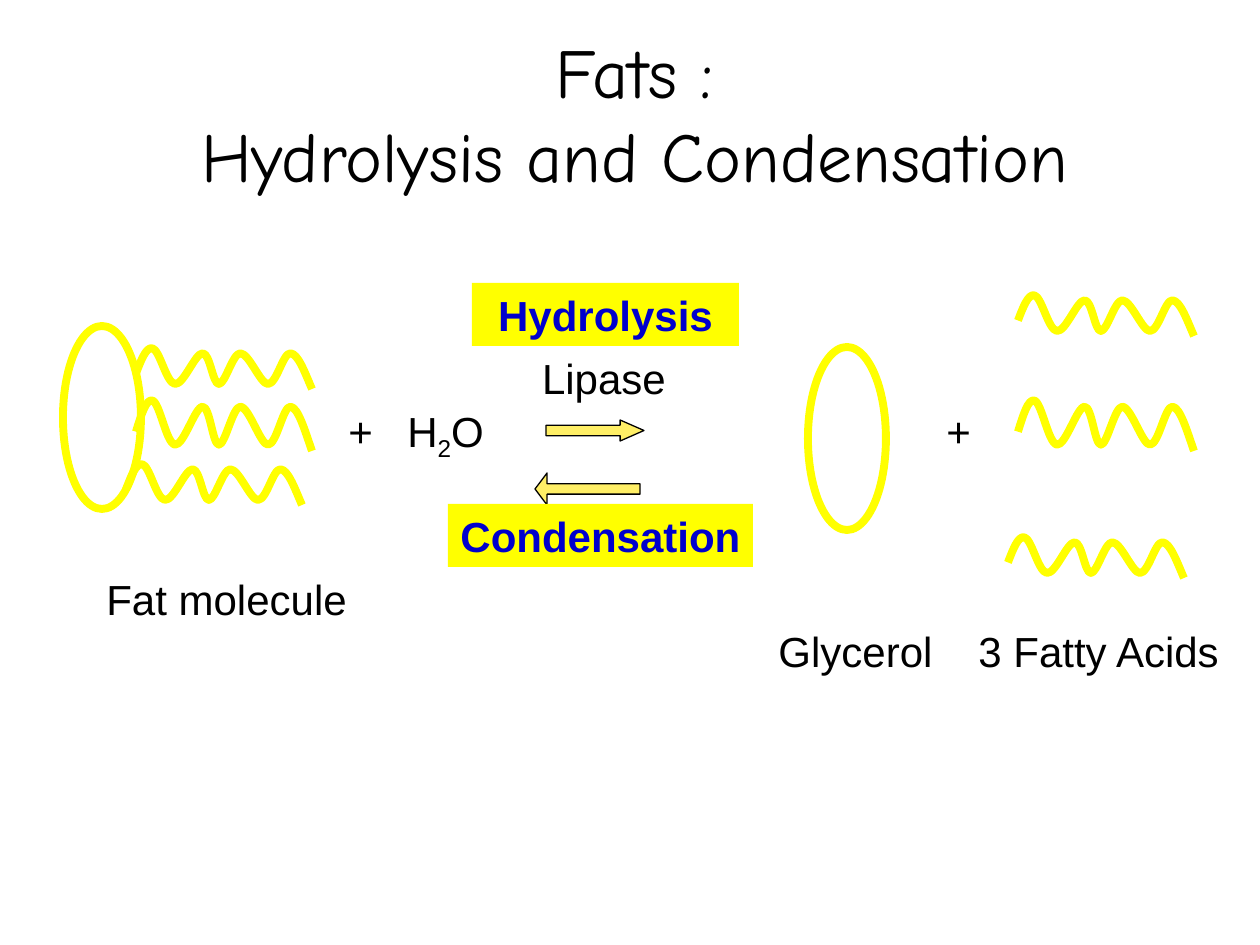
from lxml import etree
from pptx import Presentation
from pptx.dml.color import RGBColor
from pptx.enum.shapes import MSO_SHAPE
from pptx.enum.text import MSO_ANCHOR, MSO_AUTO_SIZE, PP_ALIGN
from pptx.oxml.ns import qn
from pptx.util import Pt

EMU_PER_PX = 914400 / 126
LEFT, CENTER = PP_ALIGN.LEFT, PP_ALIGN.CENTER
TOP, BOTTOM = MSO_ANCHOR.TOP, MSO_ANCHOR.BOTTOM
FIT_TEXT = MSO_AUTO_SIZE.SHAPE_TO_FIT_TEXT
OVAL, RECTANGLE = MSO_SHAPE.OVAL, MSO_SHAPE.RECTANGLE
RIGHT_ARROW, LEFT_ARROW = MSO_SHAPE.RIGHT_ARROW, MSO_SHAPE.LEFT_ARROW
YELLOW, GOLD, BLUE, BLACK, WHITE = "FFFF00", "FFEF66", "0000CC", "000000", "FFFFFF"

WAVE_WIDTH = 176
# Bezier chain of a fatty acid tail: x in 1/140 of the width, y in % of the height
WAVE = [(0, 63), (4, 32), (8, 0), (13, 3), (19, 7), (24, 85), (31, 88),
        (38, 90), (47, 15), (53, 15), (59, 15), (61, 88), (66, 88),
        (71, 88), (77, 15), (83, 15), (90, 15), (99, 88), (105, 88),
        (112, 88), (117, 13), (123, 15), (129, 17), (134, 58), (140, 100)]


def px(length):
    return round(length * EMU_PER_PX)


def color(hex_string):
    return RGBColor.from_string(hex_string)


def write(shape, *parts, size=24, font="Arial", ink=BLACK, bold=False,
          align=LEFT, anchor=TOP, wrap=False, grow=True, subscripts=(), tab=None):
    """Fill a shape with one paragraph; subscripts lists indexes of lowered parts."""
    frame = shape.text_frame
    frame.word_wrap = wrap
    frame.vertical_anchor = anchor
    if grow:
        frame.auto_size = FIT_TEXT
    paragraph = frame.paragraphs[0]
    paragraph.alignment = align
    if tab:
        stops = etree.SubElement(paragraph._p.get_or_add_pPr(), qn("a:tabLst"))
        etree.SubElement(stops, qn("a:tab"), pos=str(px(tab)), algn="l")
    for index, part in enumerate(parts):
        for line_number, line in enumerate(part.split("\n")):
            if line_number:
                paragraph.add_line_break()
            run = paragraph.add_run()
            run.text = line
            run.font.size, run.font.name, run.font.bold = Pt(size), font, bold
            run.font.color.rgb = color(ink)
            if index in subscripts:
                run.font._element.set("baseline", "-25000")


def add_text(slide, box, *parts, **text_format):
    write(slide.shapes.add_textbox(*map(px, box)), *parts, **text_format)


def add_preset(slide, kind, box, fill, line=None, line_width=0.75, adjustments=()):
    shape = slide.shapes.add_shape(kind, *map(px, box))
    shape.shadow.inherit = False
    shape.fill.solid()
    shape.fill.fore_color.rgb = color(fill)
    if line:
        shape.line.color.rgb = color(line)
        shape.line.width = Pt(line_width)
    else:
        shape.line.fill.background()
    for index, value in enumerate(adjustments):
        shape.adjustments[index] = value
    return shape


def add_glycerol(slide, left, top):
    add_preset(slide, OVAL, (left, top, 78, 183), WHITE, YELLOW, 4.5)


def bend_lines(shape):
    """Turn every three line segments of a freeform into one Bezier curve."""
    lines = list(shape._element.iter(qn("a:lnTo")))
    for first in range(0, len(lines), 3):
        curve = etree.Element(qn("a:cubicBezTo"))
        lines[first].addprevious(curve)
        for line in lines[first:first + 3]:
            curve.append(line[0])
            line.getparent().remove(line)


def add_fatty_acid(slide, left, top, height):
    start, *controls = [(px(left + x * WAVE_WIDTH / 140), px(top + y * height / 100))
                        for x, y in WAVE]
    builder = slide.shapes.build_freeform(*start, scale=1.0)
    builder.add_line_segments(controls, close=False)
    tail = builder.convert_to_shape()
    bend_lines(tail)
    tail.shadow.inherit = False
    tail.fill.background()
    tail.line.color.rgb = color(YELLOW)
    tail.line.width = Pt(4.5)


def add_fat_molecule(slide, left, top):
    add_glycerol(slide, left, top)
    for x, y, height in ((73, 21, 42), (73, 73, 52), (63, 137, 42)):
        add_fatty_acid(slide, left + x, top + y, height)
    add_text(slide, (left + 31, top + 241, 266, 63), "Fat molecule")


def add_reaction(slide, left, top):
    """Water, the two arrows, the enzyme and the names of both directions."""
    add_preset(slide, RIGHT_ARROW, (left + 210, top + 137, 98, 21), GOLD, BLACK,
               adjustments=(0.5, 1.136))
    add_preset(slide, LEFT_ARROW, (left + 199, top + 190, 105, 32), GOLD, BLACK,
               adjustments=(0.323, 0.378))
    add_text(slide, (left + 193, top + 63, 150, 63), "Lipase", align=CENTER)
    add_text(slide, (left, top + 116, 164, 63), "+\tH", "2", "O",
             subscripts=(1,), tab=59)
    for name, x, y, width, wrap in (("Condensation", 112, 221, 305, False),
                                    ("Hydrolysis", 136, 0, 267, True)):
        label = add_preset(slide, RECTANGLE, (left + x, top + y, width, 63), YELLOW)
        write(label, name, ink=BLUE, bold=True, align=CENTER, wrap=wrap)


def add_products(slide, left, top):
    add_glycerol(slide, left + 42, top + 53)
    for x, y, height in ((252, 0, 42), (252, 105, 52), (242, 242, 42)):
        add_fatty_acid(slide, left + x, top + y, height)
    add_text(slide, (left, top + 325, 180, 63), "Glycerol")
    add_text(slide, (left + 200, top + 325, 268, 63), "3 Fatty Acids", wrap=True)
    add_text(slide, (left + 168, top + 105, 50, 63), "+")


def main():
    presentation = Presentation()
    presentation.slide_width, presentation.slide_height = px(1260), px(945)
    slide = presentation.slides.add_slide(presentation.slide_layouts[6])
    add_text(slide, (94, 0, 1081, 203), "Fats :\nHydrolysis and Condensation",
             size=40, font="Comic Neue", align=CENTER, anchor=BOTTOM,
             wrap=True, grow=False)
    add_fat_molecule(slide, 63, 326)
    add_reaction(slide, 336, 283)
    add_products(slide, 766, 294)
    presentation.save("out.pptx")


if __name__ == "__main__":
    main()
